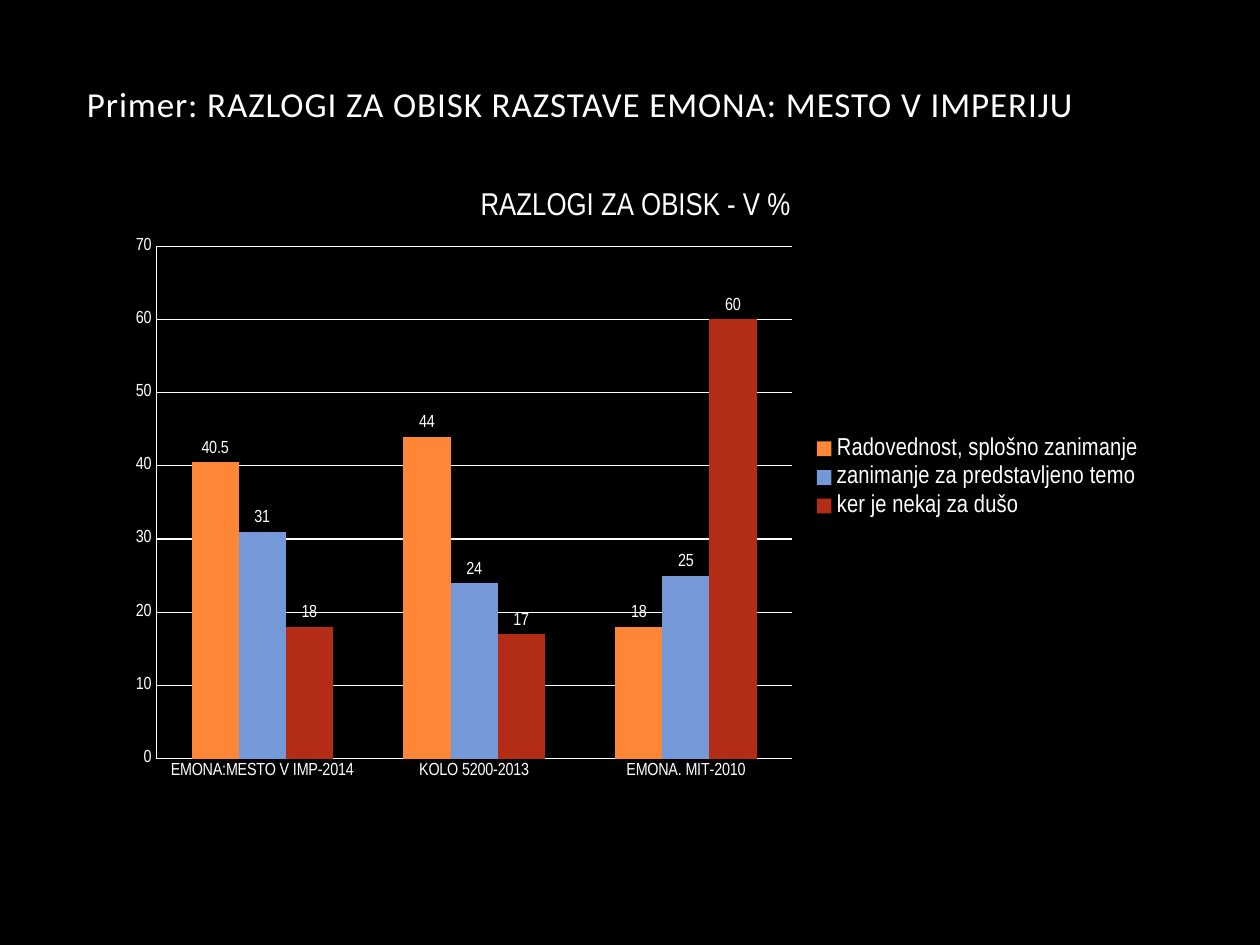
from lxml import etree
from pptx import Presentation, util as u
from pptx.chart.data import CategoryChartData
from pptx.dml.color import RGBColor
from pptx.enum import chart as ch, text
from pptx.oxml import parse_xml
from pptx.oxml.ns import nsdecls, qn

COLORS = {"background": "000000", "text": "FFFFFF"}
CATEGORIES = ["EMONA:MESTO V IMP-2014", "KOLO 5200-2013", "EMONA. MIT-2010"]
SERIES = [
    ("Radovednost, splošno zanimanje", (40.5, 44, 18), "FE8637"),
    ("zanimanje za predstavljeno temo", (31, 24, 25), "7598D9"),
    ("ker je nekaj za dušo", (18, 17, 60), "B32C16"),
]
# Inner plot area as shares of the chart
PLOT = {"x": 0.04, "y": 0.13, "w": 0.61, "h": 0.82}


def rgb(name):
    return RGBColor.from_string(COLORS[name])


def style_font(font, size, name):
    font.size, font.name, font.bold = u.Pt(size), name, False
    font.color.rgb = rgb("text")


def style_line(line):
    line.color.rgb = rgb("text")
    line.width = u.Pt(0.75)


def place_title(slide, box):
    title = slide.shapes.title
    title.left, title.top, title.width, title.height = box
    frame = title.text_frame
    frame.word_wrap = True
    frame.auto_size = text.MSO_AUTO_SIZE.NONE
    frame.vertical_anchor = text.MSO_ANCHOR.BOTTOM
    frame.margin_bottom = int(box[3] * 0.47)
    paragraph = frame.paragraphs[0]
    paragraph.alignment = text.PP_ALIGN.LEFT
    run = paragraph.add_run()
    run.text = "Primer: RAZLOGI ZA OBISK RAZSTAVE EMONA: MESTO V IMPERIJU"
    style_font(run.font, 20, "Calibri")
    run.font._element.set("spc", "50")


def set_plot_layout(chart):
    plot_area = chart._chartSpace.chart.plotArea
    for old in plot_area.findall(qn("c:layout")):
        plot_area.remove(old)
    layout = parse_xml(f"<c:layout {nsdecls('c')}><c:manualLayout/></c:layout>")
    settings = {"layoutTarget": "inner", "xMode": "edge", "yMode": "edge", **PLOT}
    for tag, value in settings.items():
        etree.SubElement(layout[0], qn(f"c:{tag}")).set("val", str(value))
    plot_area.insert(0, layout)


def place_chart(slide, box):
    data = CategoryChartData()
    data.categories = CATEGORIES
    for name, values, _ in SERIES:
        data.add_series(name, values)
    chart = slide.shapes.add_chart(ch.XL_CHART_TYPE.COLUMN_CLUSTERED, *box, data).chart
    style_font(chart.font, 10, "Arial Narrow")
    set_plot_layout(chart)

    # Chart title and legend
    chart.has_title = True
    run = chart.chart_title.text_frame.paragraphs[0].add_run()
    run.text = "RAZLOGI ZA OBISK - V %"
    style_font(run.font, 18, "Arial Narrow")
    chart.chart_title.include_in_layout = False
    chart.has_legend = True
    chart.legend.position = ch.XL_LEGEND_POSITION.RIGHT
    chart.legend.include_in_layout = False
    style_font(chart.legend.font, 14, "Arial Narrow")

    # Axes
    for axis in (chart.category_axis, chart.value_axis):
        axis.major_tick_mark = axis.minor_tick_mark = ch.XL_TICK_MARK.NONE
        style_line(axis.format.line)
    values_axis = chart.value_axis
    values_axis.minimum_scale, values_axis.maximum_scale = 0, 70
    values_axis.major_unit = 10
    values_axis.has_major_gridlines = True
    style_line(values_axis.major_gridlines.format.line)

    # Columns and their values
    plot = chart.plots[0]
    plot.gap_width, plot.overlap = 150, 0
    plot.vary_by_categories = False
    for series, (_, _, color) in zip(plot.series, SERIES):
        series.format.fill.solid()
        series.format.fill.fore_color.rgb = RGBColor.from_string(color)
        series.invert_if_negative = False
        labels = series.data_labels
        labels.show_value = True
        labels.position = ch.XL_LABEL_POSITION.OUTSIDE_END
        style_font(labels.font, 10, "Arial Narrow")


def main():
    presentation = Presentation()
    presentation.slide_width, presentation.slide_height = u.Inches(10), u.Inches(7.5)
    slide = presentation.slides.add_slide(presentation.slide_layouts[5])
    slide.background.fill.solid()
    slide.background.fill.fore_color.rgb = rgb("background")
    place_title(slide, [u.Inches(n) for n in (0.59, 0.36, 8.67, 1.18)])
    place_chart(slide, [u.Inches(n) for n in (0.91, 1.31, 8.27, 4.96)])
    presentation.save("out.pptx")


if __name__ == "__main__":
    main()
